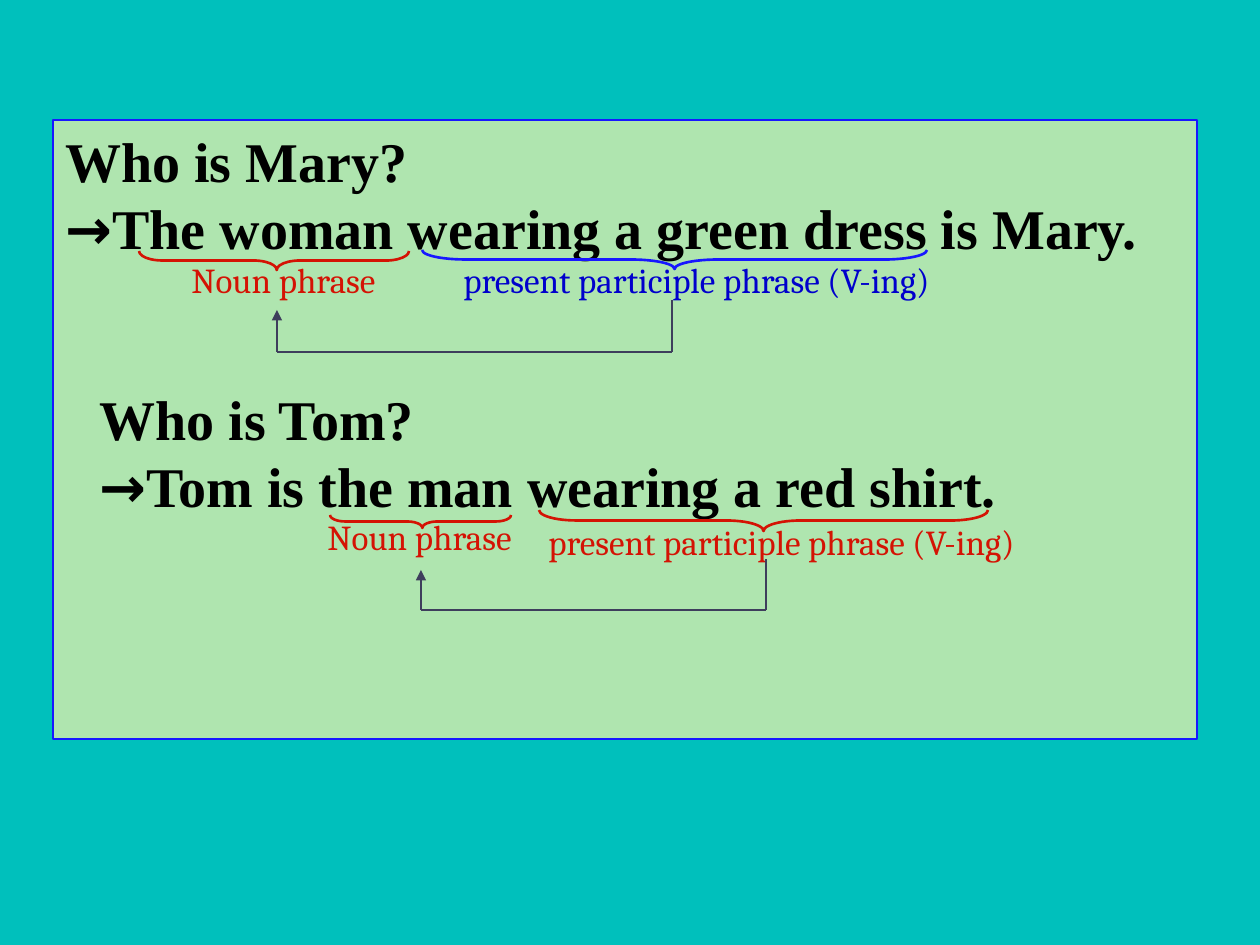
"""Build a grammar slide that marks noun phrases and present participle phrases."""
from lxml import etree
from pptx import Presentation
from pptx.dml.color import RGBColor
from pptx.enum.shapes import MSO_CONNECTOR, MSO_SHAPE
from pptx.enum.text import MSO_ANCHOR, PP_ALIGN
from pptx.oxml.ns import qn
from pptx.util import Pt

RECTANGLE, BRACE = MSO_SHAPE.RECTANGLE, MSO_SHAPE.RIGHT_BRACE
STRAIGHT, TOP, LEFT = MSO_CONNECTOR.STRAIGHT, MSO_ANCHOR.TOP, PP_ALIGN.LEFT

EMU_PER_PX = 914400 / 126
SLIDE_SIZE = (1260, 945)
TEAL, GREEN, BLACK = "00C0BC", "AFE5AF", "000000"
RED, BLUE, NAVY, SLATE = "D41304", "1717FF", "0000CC", "3E3E5C"

NOUN, PARTICIPLE = "Noun phrase", "present participle phrase (V-ing)"
SENTENCE = {"size": Pt(32), "bold": True, "name": "Times New Roman"}
ARROW = SENTENCE | {"name": "Roboto"}
LABEL = {"size": Pt(20), "name": "Cambria"}

EXAMPLES = [
    {
        "question": "Who is Mary?",
        "answer": "The woman wearing a green dress is Mary.",
        "panel": (53, 120, 1144, 619),
        "border": BLUE,
        "braces": [((139, 251, 270, 19), (1.22, 0.49), RED),
                   ((422, 250, 505, 19), (2.29, 0.5), BLUE)],
        "labels": [(NOUN, (179, 252, 325, 54), RED),
                   (PARTICIPLE, (451, 252, 703, 54), NAVY)],
        "link": [(277, 310), (277, 352), (672, 352), (672, 300)],
    },
    {
        "question": "Who is Tom?",
        "answer": "Tom is the man wearing a red shirt.",
        "panel": (87, 378, 1026, 214),
        "border": None,
        "braces": [((330, 515, 181, 13), (1.15, 0.49), RED),
                   ((539, 510, 449, 21), (1.78, 0.5), RED)],
        "labels": [(NOUN, (315, 509, 210, 54), RED),
                   (PARTICIPLE, (536, 514, 714, 54), RED)],
        "link": [(421, 570), (421, 610), (766, 610), (766, 559)],
    },
]


def px(*lengths):
    return [round(length * EMU_PER_PX) for length in lengths]


def color(hex_value):
    return RGBColor.from_string(hex_value)


def set_line(line, hex_value, points):
    line.color.rgb = color(hex_value)
    line.width = Pt(points)


def write(frame, paragraphs, hex_value):
    frame.word_wrap = True
    frame.vertical_anchor = TOP
    for index, runs in enumerate(paragraphs):
        paragraph = frame.add_paragraph() if index else frame.paragraphs[0]
        paragraph.alignment = LEFT
        for words, font_format in runs:
            run = paragraph.add_run()
            run.text = words
            run.font.color.rgb = color(hex_value)
            for attribute, value in font_format.items():
                setattr(run.font, attribute, value)


def add_panel(shapes, example):
    panel = shapes.add_shape(RECTANGLE, *px(*example["panel"]))
    panel.shadow.inherit = False
    panel.fill.solid()
    panel.fill.fore_color.rgb = color(GREEN)
    if example["border"]:
        set_line(panel.line, example["border"], 0.75)
    else:
        panel.line.fill.background()
    write(panel.text_frame, [[(example["question"], SENTENCE)],
                             [("→", ARROW), (example["answer"], SENTENCE)]], BLACK)


def add_brace(shapes, box, adjustments, hex_value):
    left, top, span, depth = box
    brace = shapes.add_shape(BRACE, *px(left + (span - depth) / 2,
                                        top + (depth - span) / 2, depth, span))
    brace.rotation = 90
    brace.shadow.inherit = False
    brace.fill.background()
    set_line(brace.line, hex_value, 1.5)
    for index, value in enumerate(adjustments):
        brace.adjustments[index] = value


def add_link(shapes, corners):
    link = shapes.add_group_shape()
    for index, (start, end) in enumerate(zip(corners, corners[1:])):
        segment = link.shapes.add_connector(STRAIGHT, *px(*start, *end))
        set_line(segment.line, SLATE, 0.75)
        if index == 0:
            outline = segment.line._get_or_add_ln()
            etree.SubElement(outline, qn("a:headEnd"), type="triangle")
        etree.SubElement(segment._element.spPr, qn("a:effectLst"))


def main():
    deck = Presentation()
    deck.slide_width, deck.slide_height = px(*SLIDE_SIZE)
    slide = deck.slides.add_slide(deck.slide_layouts[6])
    slide.background.fill.solid()
    slide.background.fill.fore_color.rgb = color(TEAL)
    for example in EXAMPLES:
        add_panel(slide.shapes, example)
        for brace in example["braces"]:
            add_brace(slide.shapes, *brace)
        for words, box, hex_value in example["labels"]:
            label = slide.shapes.add_textbox(*px(*box))
            write(label.text_frame, [[(words, LABEL)]], hex_value)
        add_link(slide.shapes, example["link"])
    deck.save("out.pptx")


if __name__ == "__main__":
    main()
